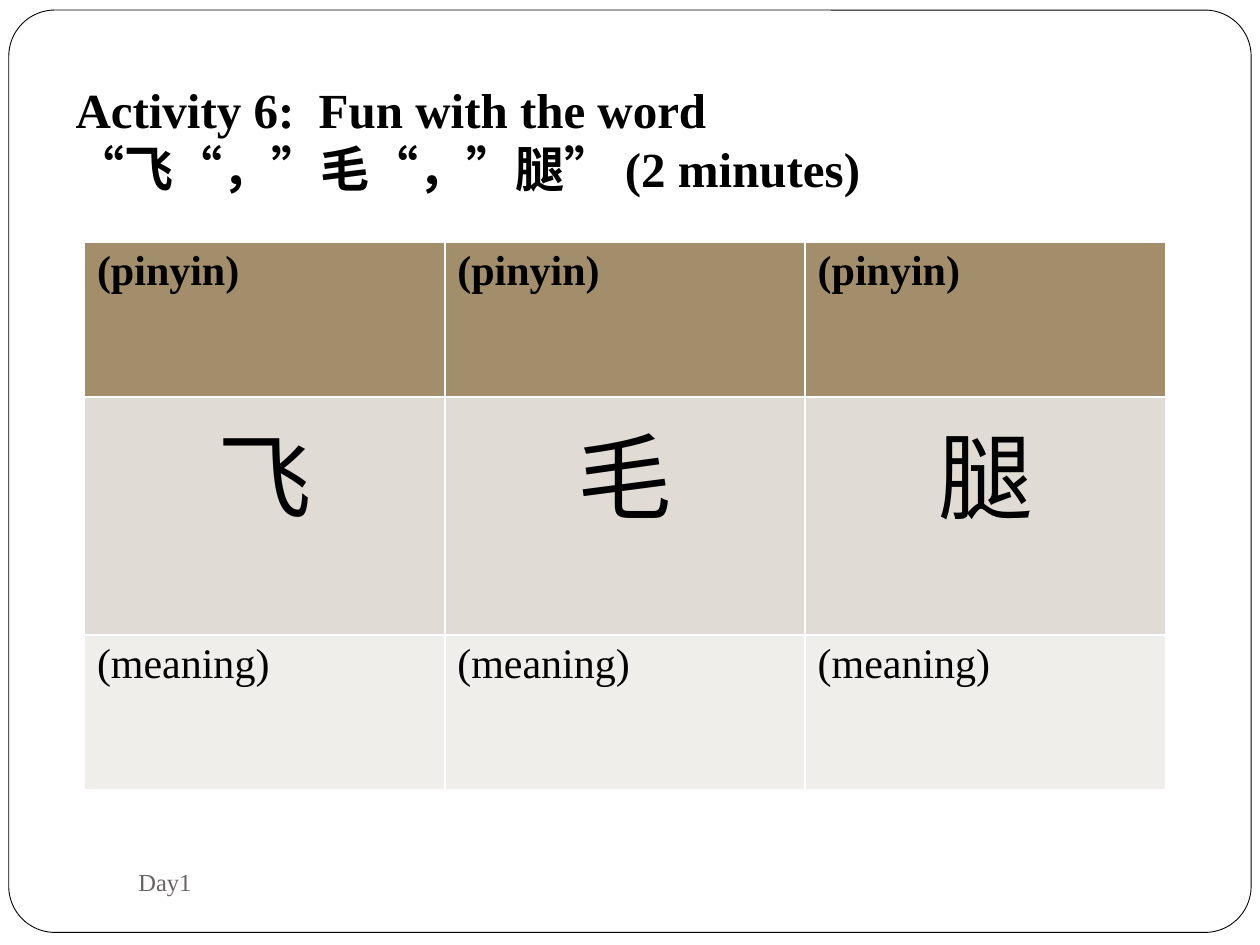
import pptx
import pptx.util
import pptx.dml.color
import pptx.enum.shapes
import pptx.enum.text

Inches, Pt = pptx.util.Inches, pptx.util.Pt
RGB = pptx.dml.color.RGBColor
ALIGN = pptx.enum.text.PP_ALIGN
ANCHOR = pptx.enum.text.MSO_ANCHOR

# Content
TITLE = ["Activity 6: \u00a0Fun with the word \u00a0", "“飞“，”毛“，”腿” (2 minutes)"]
WORDS = ["飞", "毛", "腿"]
FOOTER = "Day1"

# Look
FONT = "Times New Roman"
BLACK = RGB(0, 0, 0)
WHITE = RGB(255, 255, 255)
GRAY = RGB(0x69, 0x64, 0x64)
TAN = RGB(0xA2, 0x8E, 0x6A)
SAND = RGB(0xE0, 0xDB, 0xD4)
PALE = RGB(0xF0, 0xEE, 0xEB)

# Each row: texts, height, fill, size, bold, alignment
ROWS = [
    (["(pinyin)"] * len(WORDS), 1.23, TAN, 24, True, ALIGN.LEFT),
    (WORDS, 1.89, SAND, 54, False, ALIGN.CENTER),
    (["(meaning)"] * len(WORDS), 1.23, PALE, 24, False, ALIGN.LEFT),
]
COL = 2.86


def box(left, top, width, height):
    return [Inches(n) for n in (left, top, width, height)]


def style(par, size, color=BLACK, bold=False, align=ALIGN.LEFT):
    par.alignment = align
    font = par.font
    font.name, font.size, font.bold = FONT, Pt(size), bold
    font.color.rgb = color


deck = pptx.Presentation()
deck.slide_width, deck.slide_height = Inches(10), Inches(7.5)
slide = deck.slides.add_slide(deck.slide_layouts[5])
shapes = slide.shapes
title = shapes.title

# Rounded frame, behind the title
frame = shapes.add_shape(
    pptx.enum.shapes.MSO_SHAPE.ROUNDED_RECTANGLE, *box(0.07, 0.08, 9.86, 7.32))
frame.adjustments[0] = 0.05
frame.shadow.inherit = False
frame.fill.solid()
frame.fill.fore_color.rgb = WHITE
frame.line.color.rgb = BLACK
frame.line.width = Pt(0.5)
title._element.addprevious(frame._element)

# Title
title.left, title.top, title.width, title.height = box(0.5, 0.58, 9.25, 1.51)
text = title.text_frame
text.text = "\n".join(TITLE)
text.vertical_anchor = ANCHOR.TOP
text.auto_size = pptx.enum.text.MSO_AUTO_SIZE.NONE
for par in text.paragraphs:
    style(par, 28, bold=True)

# Word table
high = sum(row[1] for row in ROWS)
table = shapes.add_table(
    len(ROWS), len(WORDS), *box(0.67, 1.92, COL * len(WORDS), high)).table
for col in table.columns:
    col.width = Inches(COL)
for row, (texts, tall, fill, size, bold, align) in zip(table.rows, ROWS):
    row.height = Inches(tall)
    for cell, word in zip(row.cells, texts):
        cell.text = word
        cell.fill.solid()
        cell.fill.fore_color.rgb = fill
        style(cell.text_frame.paragraphs[0], size, bold=bold, align=align)

# Footer
foot = shapes.add_textbox(*box(1, 6.75, 4.33, 0.5)).text_frame
foot.word_wrap = True
foot.vertical_anchor = ANCHOR.MIDDLE
foot.text = FOOTER
style(foot.paragraphs[0], 14, GRAY)

deck.save("out.pptx")
